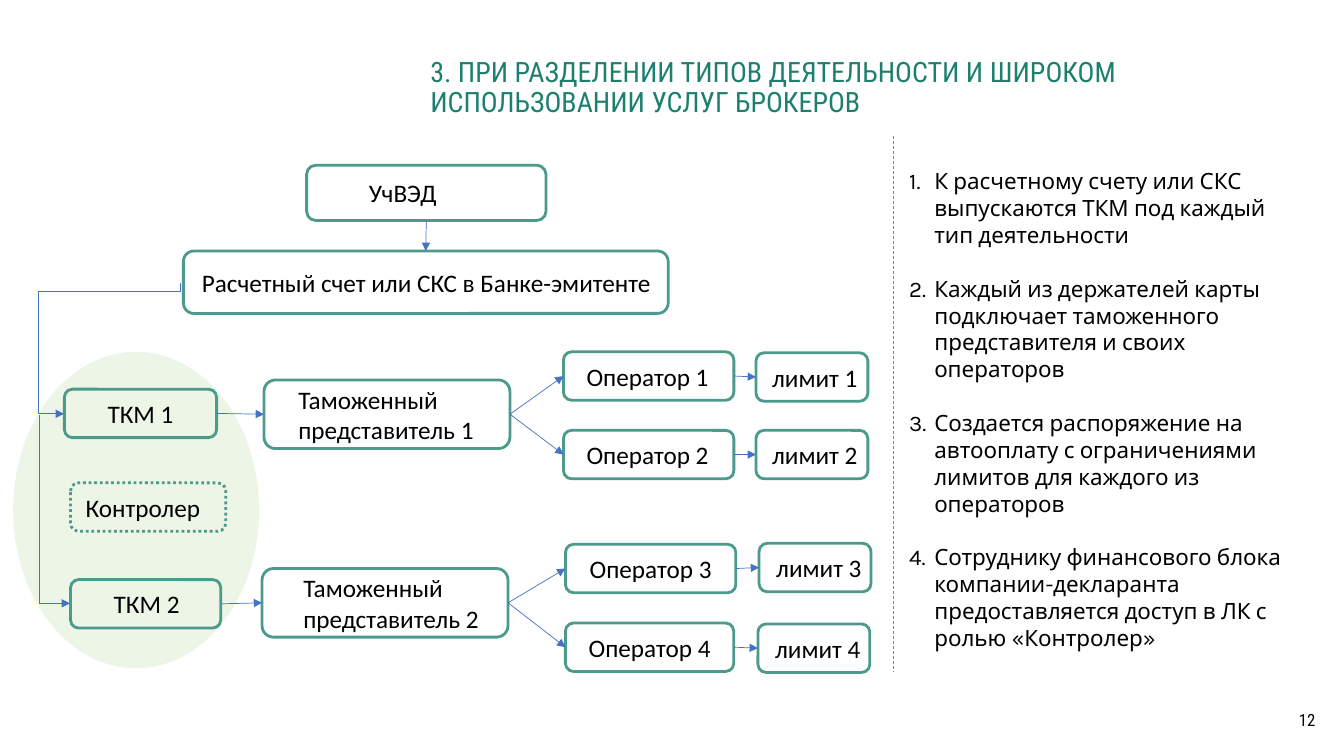
from dataclasses import dataclass

import pptx
import pptx.dml.color
import pptx.enum.dml
import pptx.enum.shapes
import pptx.enum.text
import pptx.oxml.ns
import pptx.util
from lxml import etree

Pt = pptx.util.Pt
RGBColor = pptx.dml.color.RGBColor
Shape = pptx.enum.shapes.MSO_SHAPE
Connector = pptx.enum.shapes.MSO_CONNECTOR
Dash = pptx.enum.dml.MSO_LINE
Align = pptx.enum.text.PP_ALIGN
Anchor = pptx.enum.text.MSO_ANCHOR
qn = pptx.oxml.ns.qn

TITLE_GREEN = RGBColor(0x1D, 0x80, 0x6E)
BOX_GREEN = RGBColor(0x4B, 0x9A, 0x8C)
PALE_GREEN = RGBColor(0xE2, 0xF0, 0xD9)
ARROW_BLUE = RGBColor(0x44, 0x72, 0xC4)
BLACK = RGBColor(0, 0, 0)

CORNER_INSET = 0.0488  # text inset of a rounded box, as a share of its height
TOP, LEFT, BOTTOM, RIGHT = range(4)  # connection sites of a box


@dataclass
class Box:
    text: str
    left: float
    top: float
    width: float
    height: float
    text_left: float
    dash: object = None


@dataclass
class Elbow:
    preset: str
    start: tuple
    end: tuple
    rotation: int
    adjustments: tuple = ()


BOXES = [
    Box("УчВЭД", 219, 118, 171, 39.5, 263.5),
    Box("Расчетный счет или СКС в Банке-эмитенте", 131, 179.3, 346.3, 44.6, 144.2),
    Box("ТКМ 1", 46, 278, 108.7, 34.6, 76.8),
    Box("Контролер", 50.4, 344.9, 110.9, 34.6, 61.2, Dash.ROUND_DOT),
    Box("ТКМ 2", 50.4, 414, 107.3, 34.6, 81.2),
    Box("Таможенный представитель 1", 188.6, 271.4, 175.7, 49, 213.1),
    Box("Таможенный представитель 2", 187.2, 406.1, 175.7, 49, 216.7),
    Box("Оператор 1", 402.5, 251.3, 121.7, 34.6, 419),
    Box("Оператор 2", 402.5, 307.4, 121.7, 34.6, 419),
    Box("Оператор 3", 403.9, 388.8, 121.7, 34.6, 421.2),
    Box("Оператор 4", 403.9, 445, 120.2, 34.6, 420.5),
    Box("лимит 1", 540, 252, 79.9, 34.6, 551.5),
    Box("лимит 2", 540, 307.4, 79.9, 34.6, 551.5),
    Box("лимит 3", 542.2, 388.1, 79.9, 34.6, 554.4),
    Box("лимит 4", 541.4, 445.7, 79.9, 34.6, 553.7),
]

# Elbows are given before their rotation
ELBOWS = [
    Elbow("bentConnector4", (40.3, 207.4), (133.9, 290.2), 90, (6300, 121800)),
    Elbow("bentConnector2", (106.6, 352.8), (-28.1, 374.4), 270),
]

STEPS = [
    "К расчетному счету или СКС выпускаются ТКМ под каждый тип деятельности",
    "Каждый из держателей карты подключает таможенного представителя и своих операторов",
    "Создается распоряжение на автооплату с ограничениями лимитов для каждого из операторов",
    "Сотруднику финансового блока компании-декларанта предоставляется доступ в ЛК с ролью «Контролер»",
]


def write_text(shape, *texts: str, font="Calibri", size=18, color=BLACK, align=Align.LEFT,
               anchor=Anchor.MIDDLE, insets=(7.2, 3.6, 7.2, 3.6), spacing=1.0,
               gap=0.0, numbered=False) -> None:
    frame = shape.text_frame
    frame.word_wrap = True
    frame.auto_size = pptx.enum.text.MSO_AUTO_SIZE.NONE
    frame.vertical_anchor = anchor
    frame.margin_left, frame.margin_top, frame.margin_right, frame.margin_bottom = map(Pt, insets)
    for index, text in enumerate(texts):
        paragraph = frame.add_paragraph() if index else frame.paragraphs[0]
        paragraph.alignment = align
        paragraph.line_spacing = spacing
        paragraph.space_before = Pt(gap if index else 0)
        if numbered:
            properties = paragraph._p.get_or_add_pPr()
            properties.set("marL", str(Pt(18)))
            properties.set("indent", str(-Pt(18)))
            etree.SubElement(properties, qn("a:buFont"), typeface="+mj-lt")
            etree.SubElement(properties, qn("a:buAutoNum"), type="arabicPeriod")
        run = paragraph.add_run()
        run.text = text
        run.font.name = font
        run.font.size = Pt(size)
        run.font.color.rgb = color


def place(shape, left: float, top: float, width: float, height: float) -> None:
    shape.left, shape.top, shape.width, shape.height = map(Pt, (left, top, width, height))


def draw_box(slide, box: Box):
    shape = slide.shapes.add_shape(Shape.ROUNDED_RECTANGLE,
                                   *map(Pt, (box.left, box.top, box.width, box.height)))
    shape.shadow.inherit = False
    shape.fill.background()
    shape.line.color.rgb = BOX_GREEN
    shape.line.width = Pt(2)
    if box.dash:
        shape.line.dash_style = box.dash
    inset = box.text_left - box.left - CORNER_INSET * box.height
    write_text(shape, box.text, insets=(inset, 0, 0, 0))
    return shape


def draw_line(slide, start=(0, 0), end=(0, 0), kind=Connector.STRAIGHT, color=ARROW_BLUE,
              dash=None, arrow=True):
    line = slide.shapes.add_connector(kind, *map(Pt, (*start, *end)))
    line.line.color.rgb = color
    line.line.width = Pt(0.5)
    if dash:
        line.line.dash_style = dash
    properties = line._element.spPr
    if arrow:
        etree.SubElement(properties.find(qn("a:ln")), qn("a:tailEnd"), type="triangle")
    etree.SubElement(properties, qn("a:effectLst"))
    return line


def join(slide, source, target, source_site=RIGHT, target_site=LEFT) -> None:
    arrow = draw_line(slide)
    arrow.begin_connect(source, source_site)
    arrow.end_connect(target, target_site)


def draw_elbow(slide, elbow: Elbow) -> None:
    arrow = draw_line(slide, elbow.start, elbow.end, Connector.ELBOW)
    properties = arrow._element.spPr
    properties.find(qn("a:xfrm")).set("rot", str(elbow.rotation * 60000))
    geometry = properties.find(qn("a:prstGeom"))
    geometry.set("prst", elbow.preset)
    for number, value in enumerate(elbow.adjustments, 1):
        etree.SubElement(geometry.find(qn("a:avLst")), qn("a:gd"),
                         name=f"adj{number}", fmla=f"val {value}")


def main() -> None:
    presentation = pptx.Presentation()
    presentation.slide_width, presentation.slide_height = Pt(960), Pt(540)
    slide = presentation.slides.add_slide(presentation.slide_layouts[1])

    # Title and numbered steps
    title, steps = slide.placeholders
    place(title, 307.4, 34.6, 639.4, 56.9)
    write_text(title, "3. ПРИ РАЗДЕЛЕНИИ ТИПОВ ДЕЯТЕЛЬНОСТИ И ШИРОКОМ ИСПОЛЬЗОВАНИИ УСЛУГ БРОКЕРОВ",
               font="Roboto Condensed", size=20, color=TITLE_GREEN, insets=(0, 0, 36, 0), spacing=0.9)
    place(steps, 642.2, 115.9, 289.4, 375.8)
    write_text(steps, *STEPS, font="Karla", size=16, anchor=Anchor.TOP, gap=19.2, numbered=True)

    # Backdrop of the cards
    backdrop = slide.shapes.add_shape(Shape.OVAL, *map(Pt, (9.4, 251.3, 175.7, 226.1)))
    backdrop.shadow.inherit = False
    backdrop.line.fill.background()
    backdrop.fill.solid()
    backdrop.fill.fore_color.rgb = PALE_GREEN
    etree.SubElement(backdrop._element.spPr.find(f".//{qn('a:srgbClr')}"), qn("a:alpha"), val="61000")

    # Boxes, arrows and divider
    shapes = {box.text: draw_box(slide, box) for box in BOXES}
    join(slide, shapes[BOXES[0].text], shapes[BOXES[1].text], BOTTOM, TOP)
    for branch in (1, 2):
        agent = shapes[f"Таможенный представитель {branch}"]
        join(slide, shapes[f"ТКМ {branch}"], agent)
        for number in (2 * branch - 1, 2 * branch):
            operator = shapes[f"Оператор {number}"]
            join(slide, agent, operator)
            join(slide, operator, shapes[f"лимит {number}"])
    for elbow in ELBOWS:
        draw_elbow(slide, elbow)
    draw_line(slide, (637.9, 97.2), (637.9, 479.5), color=BOX_GREEN, dash=Dash.DASH, arrow=False)

    # Slide number
    number_box = slide.shapes.add_textbox(*map(Pt, (730.8, 500.4, 216, 28.8)))
    write_text(number_box, "12", font="Roboto Condensed", size=12, align=Align.RIGHT, spacing=0.9)

    presentation.save("out.pptx")


if __name__ == "__main__":
    main()
